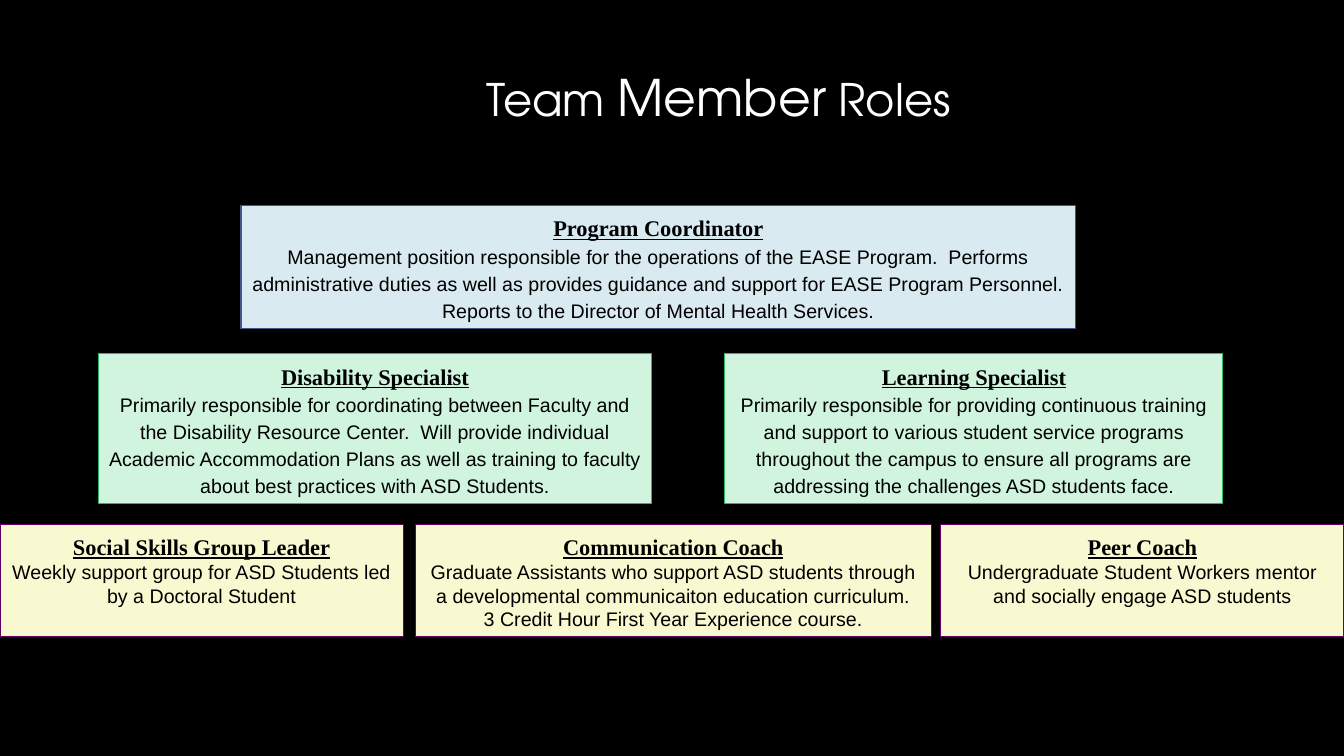
"""Build the Team Member Roles slide."""
from dataclasses import dataclass

from pptx import Presentation
from pptx.dml.color import RGBColor
from pptx.enum.shapes import MSO_SHAPE
from pptx.enum.text import MSO_ANCHOR, MSO_AUTO_SIZE, PP_ALIGN
from pptx.util import Inches, Pt


@dataclass(frozen=True)
class Theme:
    """Colours, fonts and type sizes of the slide."""

    background: str = "000000"
    title_color: str = "FFFFFF"
    text_color: str = "000000"
    coordinator: tuple = ("D9EAF1", "415588")
    specialist: tuple = ("D1F4DF", "2CB663")
    student_support: tuple = ("F9F9D1", "660066")
    title_font: str = "TeX Gyre Adventor"
    heading_font: str = "Times New Roman"
    body_font: str = "Arial"
    title_size: int = 32
    title_accent_size: int = 36
    heading_size: int = 16
    body_size: int = 14
    border_width: float = 0.75


THEME = Theme()
SLIDE_WIDTH = Inches(13.33)
SLIDE_HEIGHT = Inches(7.5)

TITLE_AREA = (14.55, 8.13, 78.77, 10.13)
TITLE_RUNS = [
    ("Team ", THEME.title_size),
    ("Member", THEME.title_accent_size),
    (" Roles ", THEME.title_size),
]

TIERS = [
    {
        "top": 27.2, "height": 16.27, "colors": THEME.coordinator, "spacing": 1.15,
        "roles": [
            (17.93, 62.11, "Program Coordinator", [
                "Management position responsible for the operations of the EASE Program.  "
                "Performs administrative duties as well as provides guidance and support for "
                "EASE Program Personnel. Reports to the Director of Mental Health Services."]),
        ],
    },
    {
        "top": 46.8, "height": 19.87, "colors": THEME.specialist, "spacing": 1.15,
        "roles": [
            (7.35, 41.11, "Disability Specialist", [
                "Primarily responsible for coordinating between Faculty and the Disability "
                "Resource Center.  Will provide individual Academic Accommodation Plans as well "
                "as training to faculty about best practices with ASD Students."]),
            (53.94, 37.06, "Learning Specialist", [
                "Primarily responsible for providing continuous training and support to various "
                "student service programs throughout the campus to ensure all programs are "
                "addressing the challenges ASD students face."]),
        ],
    },
    {
        "top": 69.33, "height": 14.93, "colors": THEME.student_support, "spacing": 1.0,
        "roles": [
            (0, 30, "Social Skills Group Leader", [
                "Weekly support group for ASD Students led by a Doctoral Student"]),
            (30.9, 38.4, "Communication Coach", [
                "Graduate Assistants who support ASD students through a developmental "
                "communicaiton education curriculum.",
                "3 Credit Hour First Year Experience course."]),
            (70, 30, "Peer Coach", [
                "Undergraduate Student Workers mentor and socially engage ASD students"]),
        ],
    },
]


def apply_format(target, values):
    """Set each named attribute on the target."""
    for name, value in values.items():
        setattr(target, name, value)


def area(left, top, width, height):
    """Turn percentages of the slide into a position and size."""
    return {
        "left": int(SLIDE_WIDTH * left / 100),
        "top": int(SLIDE_HEIGHT * top / 100),
        "width": int(SLIDE_WIDTH * width / 100),
        "height": int(SLIDE_HEIGHT * height / 100),
    }


def add_run(paragraph, text, font, size, color, **styles):
    """Append a formatted run to the paragraph."""
    run = paragraph.add_run()
    run.text = text
    apply_format(run.font, {"name": font, "size": Pt(size), **styles})
    run.font.color.rgb = RGBColor.from_string(color)


def format_paragraph(paragraph, spacing):
    """Centre the paragraph and set its spacing."""
    apply_format(paragraph, {
        "alignment": PP_ALIGN.CENTER, "line_spacing": spacing,
        "space_before": Pt(0), "space_after": Pt(0)})


def add_title(slide):
    """Fill and place the title placeholder."""
    title = slide.shapes.title
    apply_format(title, area(*TITLE_AREA))
    margins = ("margin_left", "margin_right", "margin_top", "margin_bottom")
    apply_format(title.text_frame, {
        "word_wrap": True, "auto_size": MSO_AUTO_SIZE.NONE,
        "vertical_anchor": MSO_ANCHOR.MIDDLE,
        **dict.fromkeys(margins, Inches(0.1))})
    paragraph = title.text_frame.paragraphs[0]
    format_paragraph(paragraph, 0.9)
    for text, size in TITLE_RUNS:
        add_run(paragraph, text, THEME.title_font, size, THEME.title_color)


def add_role(slide, box, colors, spacing, heading, duties):
    """Add a role box with an underlined heading and its duties."""
    shape = slide.shapes.add_shape(MSO_SHAPE.RECTANGLE, **box)
    shape.shadow.inherit = False
    fill_color, line_color = colors
    shape.fill.solid()
    shape.fill.fore_color.rgb = RGBColor.from_string(fill_color)
    shape.line.color.rgb = RGBColor.from_string(line_color)
    shape.line.width = Pt(THEME.border_width)
    frame = shape.text_frame
    apply_format(frame, {
        "word_wrap": True, "auto_size": MSO_AUTO_SIZE.SHAPE_TO_FIT_TEXT,
        "vertical_anchor": MSO_ANCHOR.TOP})
    paragraph = frame.paragraphs[0]
    format_paragraph(paragraph, 1.15)
    add_run(paragraph, heading, THEME.heading_font, THEME.heading_size,
            THEME.text_color, bold=True, underline=True)
    for duty in duties:
        paragraph = frame.add_paragraph()
        format_paragraph(paragraph, spacing)
        add_run(paragraph, duty, THEME.body_font, THEME.body_size, THEME.text_color)


def main():
    """Create and save the presentation."""
    presentation = Presentation()
    apply_format(presentation, {"slide_width": SLIDE_WIDTH, "slide_height": SLIDE_HEIGHT})
    slide = presentation.slides.add_slide(presentation.slide_layouts[5])
    slide.background.fill.solid()
    slide.background.fill.fore_color.rgb = RGBColor.from_string(THEME.background)
    add_title(slide)
    for tier in TIERS:
        for left, width, heading, duties in tier["roles"]:
            box = area(left, tier["top"], width, tier["height"])
            add_role(slide, box, tier["colors"], tier["spacing"], heading, duties)
    presentation.save("out.pptx")


if __name__ == "__main__":
    main()
